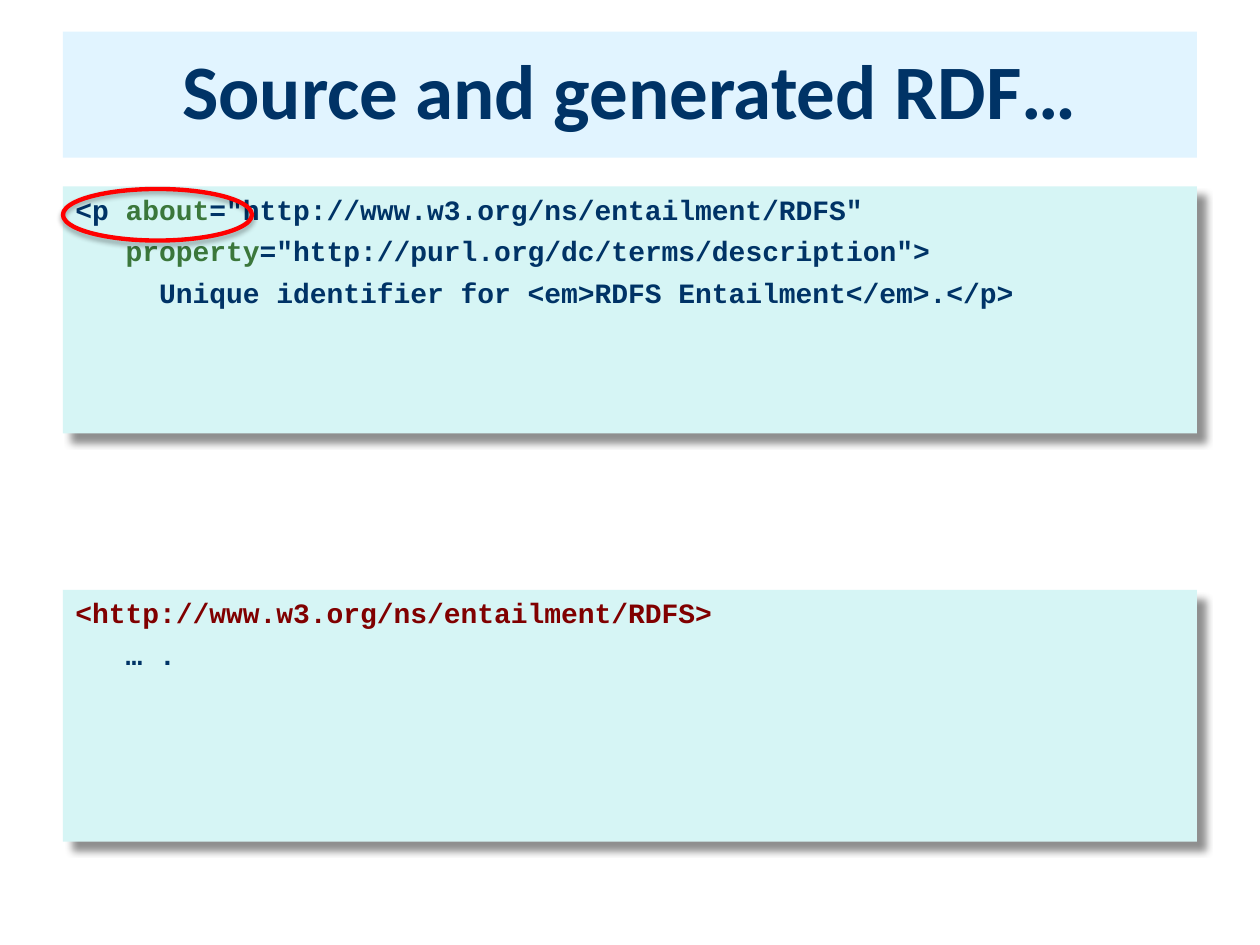
from pptx import Presentation
from pptx.dml.color import RGBColor
from pptx.enum.shapes import MSO_SHAPE as SHAPE
from pptx.enum.text import MSO_ANCHOR as ANCHOR, PP_ALIGN as ALIGN
from pptx.oxml import parse_xml
from pptx.oxml.ns import nsdecls
from pptx.util import Cm, Pt

NAVY = RGBColor(0x00, 0x33, 0x66)
GREEN = RGBColor(0x3B, 0x77, 0x3B)
MAROON = RGBColor(0x80, 0x00, 0x00)
RED = RGBColor(0xFF, 0x00, 0x00)
PALE_BLUE = RGBColor(0xE1, 0xF4, 0xFF)
PALE_TEAL = RGBColor(0xD6, 0xF5, 0xF5)

LEFT, WIDTH = Cm(1.27), Cm(22.86)

prs = Presentation()
prs.slide_width, prs.slide_height = Cm(25.4), Cm(19.05)
s = prs.slides.add_slide(prs.slide_layouts[6])


def add_box(kind, top, width, height, fill=None):
    sp = s.shapes.add_shape(kind, LEFT, top, width, height)
    sp.shadow.inherit = False
    sp.line.fill.background()
    if fill is None:
        sp.fill.background()
    else:
        sp.fill.solid()
        sp.fill.fore_color.rgb = fill
    return sp


def add_shadow(sp, blur, dist, angle, alpha):
    sp._element.spPr.find("{*}effectLst").append(parse_xml(
        f'<a:outerShdw {nsdecls("a")} blurRad="{Pt(blur)}" dist="{Pt(dist)}" '
        f'dir="{angle * 60000}" algn="tl" rotWithShape="0"><a:srgbClr val="000000">'
        f'<a:alpha val="{alpha * 1000}"/></a:srgbClr></a:outerShdw>'))


title = add_box(SHAPE.RECTANGLE, Cm(0.64), WIDTH, Cm(2.54), PALE_BLUE)
title.text_frame.vertical_anchor = ANCHOR.MIDDLE
p = title.text_frame.paragraphs[0]
p.text = "Source and generated RDF…"
p.alignment = ALIGN.CENTER
p.line_spacing = 0.9
p.font.name, p.font.size, p.font.bold = "Calibri", Pt(44), True
p.font.color.rgb = NAVY

source = [
    [("<p ", NAVY), ("about", GREEN), ('="http://www.w3.org/ns/entailment/RDFS"', NAVY)],
    [("   ", NAVY), ("property", GREEN), ('="http://purl.org/dc/terms/description">', NAVY)],
    [("     Unique identifier for <em>RDFS Entailment</em>.</p>", NAVY)],
]
generated = [
    [("<http://www.w3.org/ns/entailment/RDFS>", MAROON)],
    [("   … .", NAVY)],
]

for top, height, lines in [(Cm(3.76), Cm(4.98), source), (Cm(11.89), Cm(5.08), generated)]:
    sp = add_box(SHAPE.RECTANGLE, top, WIDTH, height, PALE_TEAL)
    add_shadow(sp, 4, 7, 45, 43)
    tf = sp.text_frame
    tf.word_wrap = False
    tf.vertical_anchor = ANCHOR.TOP
    for i, line in enumerate(lines):
        p = tf.add_paragraph() if i else tf.paragraphs[0]
        p.alignment = ALIGN.LEFT
        p.space_before = Pt(4.4 if i else 0)
        p.font.name, p.font.size, p.font.bold = "Courier New", Pt(16), True
        for text, color in line:
            r = p.add_run()
            r.text = text
            r.font.color.rgb = color

ring = add_box(SHAPE.OVAL, Cm(3.81), Cm(3.81), Cm(1.04))
ring.line.color.rgb = RED
ring.line.width = Pt(2.5)
add_shadow(ring, 3.1, 1.8, 90, 35)

prs.save("out.pptx")
